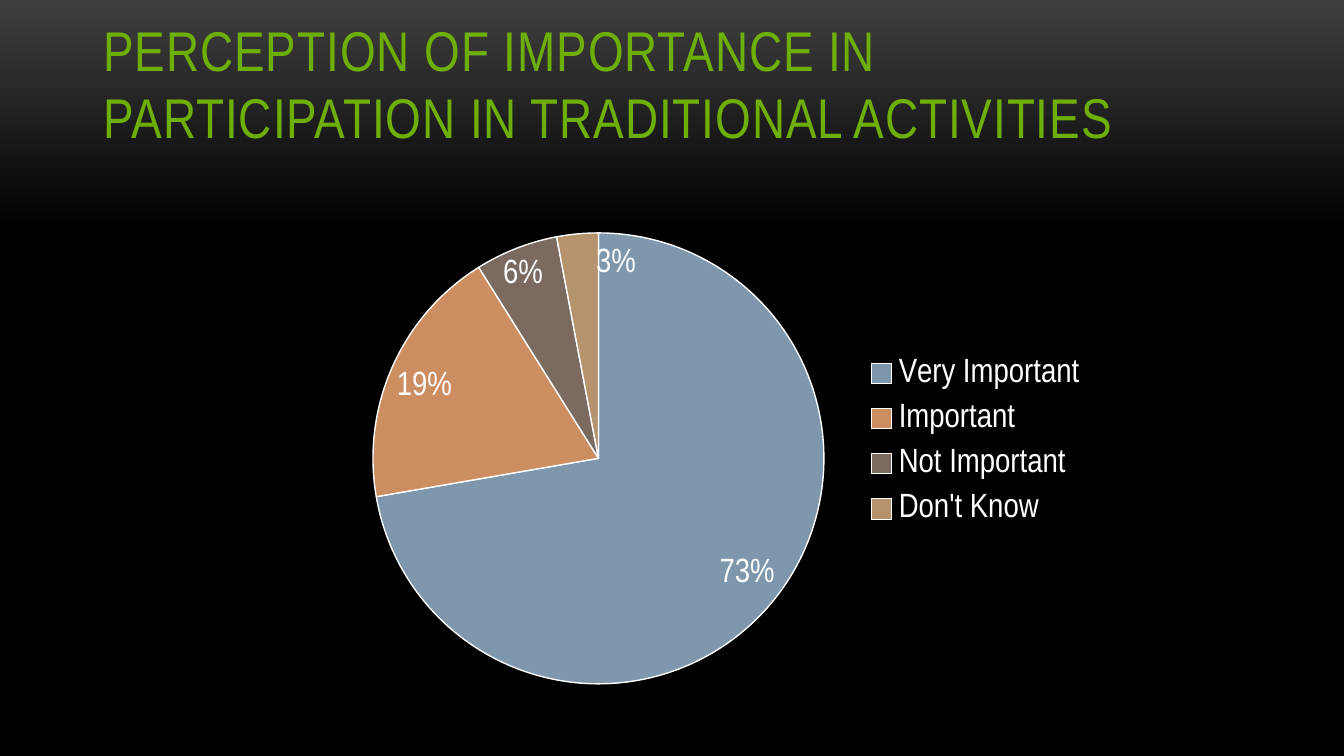
from lxml import etree
from pptx import Presentation
from pptx import util as u
from pptx.chart.data import CategoryChartData
from pptx.dml.color import RGBColor
from pptx.enum import chart as ch
from pptx.enum import text as tx
from pptx.oxml.ns import qn

PX = 914400 / 134.4
FONT = "Arial Narrow"
PERCENT = '0"%"'
GREEN = RGBColor(0x6E, 0xAF, 0x05)
WHITE = RGBColor(0xFF, 0xFF, 0xFF)
GRAY = RGBColor(0x3F, 0x3F, 0x3F)
BLACK = RGBColor(0, 0, 0)
BLUE = RGBColor(0x7E, 0x97, 0xAD)
ORANGE = RGBColor(0xCC, 0x8E, 0x60)
BROWN = RGBColor(0x7A, 0x6A, 0x60)
TAN = RGBColor(0xB4, 0x93, 0x6D)

TITLE_BOX = (90, 31, 1165, 126)
CHART_BOX = (274, 176, 891, 527)
PIE_BOX = (373, 233, 451, 451)
LEGEND_BOX = (863, 344, 225, 195)

# Name, share, slice color, label shift in px
ANSWERS = [
    ("Very Important", 73, BLUE, (10, -9)),
    ("Important", 19, ORANGE, (-3, 2)),
    ("Not Important", 6, BROWN, (-16, 4)),
    ("Don't Know", 3, TAN, (18, 7)),
]


def emu(box):
    return [u.Emu(round(n * PX)) for n in box]


def style(font, size, color):
    font.name = FONT
    font.size = u.Pt(size)
    font.bold = False
    font.color.rgb = color


def write(frame, words, size=18, color=WHITE, track=0):
    para = frame.paragraphs[0]
    para.alignment = tx.PP_ALIGN.LEFT
    run = para.add_run()
    run.text = words
    style(run.font, size, color)
    run.font._element.set("spc", str(track))


def layout(node, at, vals):
    """Give a chart part a manual layout."""
    for old in node.findall(qn("c:layout")):
        node.remove(old)
    lay = etree.Element(qn("c:layout"))
    node.insert(at, lay)
    man = etree.SubElement(lay, qn("c:manualLayout"))
    for tag, val in vals:
        etree.SubElement(man, qn("c:" + tag)).set("val", str(val))


def place(node, box, at, inner=False):
    """Fix a chart part to a px box, as fractions of the chart."""
    left, top, wide, high = CHART_BOX
    vals = [("xMode", "edge"), ("yMode", "edge"),
            ("x", (box[0] - left) / wide), ("y", (box[1] - top) / high),
            ("w", box[2] / wide), ("h", box[3] / high)]
    if inner:
        vals.insert(0, ("layoutTarget", "inner"))
    layout(node, at, vals)


def backdrop(slide):
    fill = slide.background.fill
    fill.gradient()
    fill.gradient_angle = 270
    for stop, color, pos in zip(fill.gradient_stops, (GRAY, BLACK), (0, 0.31)):
        stop.color.rgb = color
        stop.position = pos


def heading(slide, words):
    title = slide.shapes.title
    title.left, title.top, title.width, title.height = emu(TITLE_BOX)
    frame = title.text_frame
    frame.word_wrap = True
    frame.auto_size = tx.MSO_AUTO_SIZE.NONE
    frame.vertical_anchor = tx.MSO_ANCHOR.BOTTOM
    write(frame, words, size=30, color=GREEN, track=50)


def pie(slide):
    names, vals, colors, shifts = zip(*ANSWERS)
    data = CategoryChartData(number_format=PERCENT)
    data.categories = names
    data.add_series("Series 1", vals)
    chart = slide.shapes.add_chart(
        ch.XL_CHART_TYPE.PIE, *emu(CHART_BOX), data).chart
    chart.has_title = False
    style(chart.font, 18, WHITE)
    plot = chart.plots[0]
    plot.vary_by_categories = True
    series = plot.series[0]

    # Percent labels
    labels = series.data_labels
    labels.show_value = True
    labels.number_format = PERCENT
    labels.number_format_is_linked = False
    labels.position = ch.XL_LABEL_POSITION.INSIDE_END
    style(labels.font, 18, WHITE)

    # Slices, each with its label shifted
    for i, (color, (dx, dy)) in enumerate(zip(colors, shifts)):
        point = series.points[i]
        form = point.format
        form.fill.solid()
        form.fill.fore_color.rgb = color
        form.line.color.rgb = WHITE
        form.line.width = u.Pt(0.75)
        label = point.data_label
        label.position = ch.XL_LABEL_POSITION.INSIDE_END
        style(label.font, 18, WHITE)
        node = labels._element.findall(qn("c:dLbl"))[i]
        layout(node, 1, [("x", dx / CHART_BOX[2]), ("y", dy / CHART_BOX[3])])

    # Legend and plot area
    chart.has_legend = True
    legend = chart.legend
    legend.position = ch.XL_LEGEND_POSITION.RIGHT
    legend.include_in_layout = False
    style(legend.font, 18, WHITE)
    area = chart._chartSpace.find(".//" + qn("c:plotArea"))
    place(area, PIE_BOX, 0, inner=True)
    place(legend._element, LEGEND_BOX, 1)


def main():
    deck = Presentation()
    deck.slide_width, deck.slide_height = emu((1344, 756))
    slide = deck.slides.add_slide(deck.slide_layouts[5])
    backdrop(slide)
    heading(slide, "PERCEPTION OF IMPORTANCE IN PARTICIPATION "
                   "IN TRADITIONAL ACTIVITIES")
    pie(slide)
    deck.save("out.pptx")


if __name__ == "__main__":
    main()
